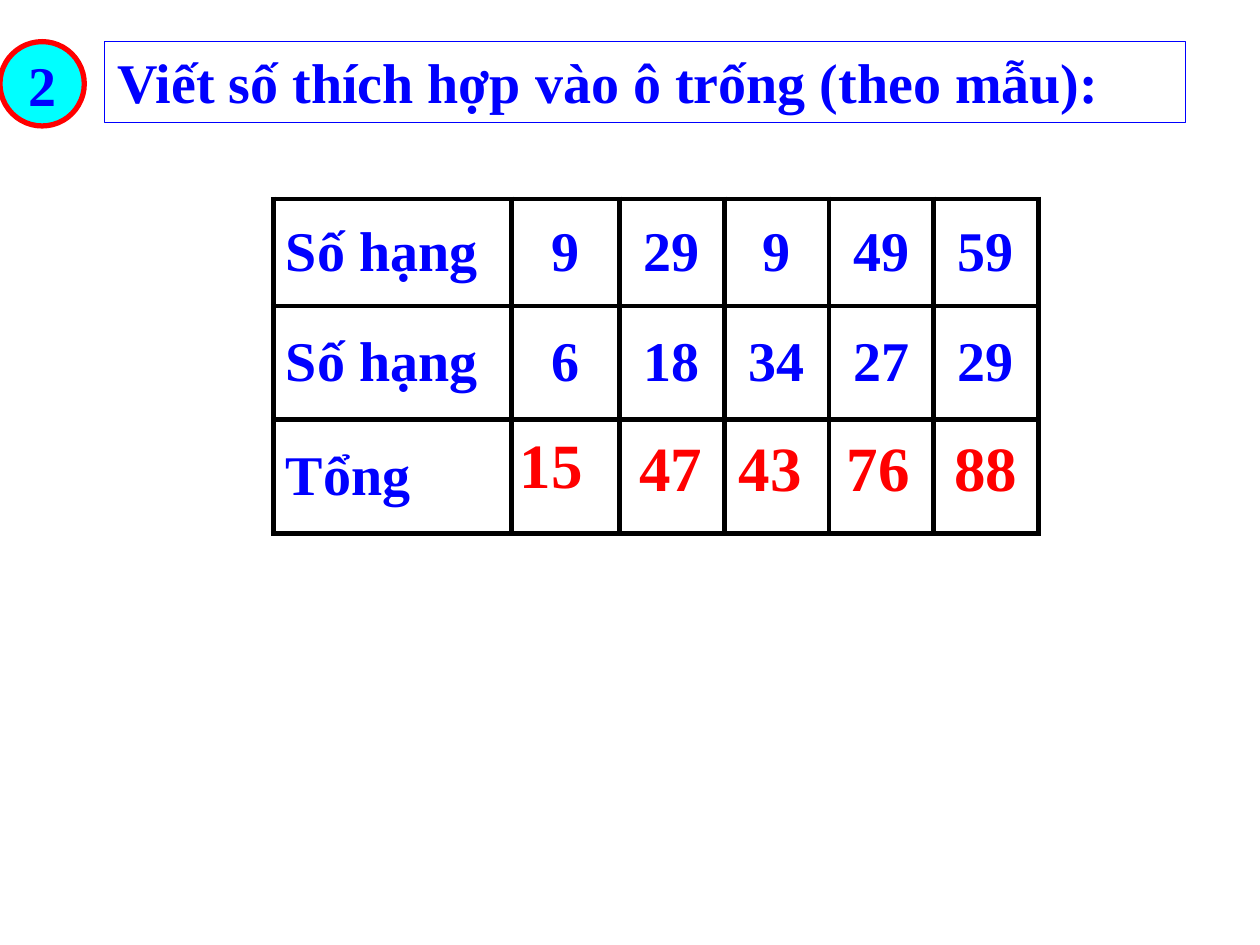
"""Build a maths exercise slide: an addition table with its sums filled in."""

from typing import NamedTuple

from lxml.etree import SubElement
from pptx import Presentation
from pptx.dml.color import RGBColor
from pptx.enum.shapes import MSO_SHAPE as Preset
from pptx.enum.text import MSO_ANCHOR as Anchor, MSO_AUTO_SIZE as AutoSize, PP_ALIGN as Align
from pptx.oxml.ns import qn
from pptx.util import Cm, Pt

BLUE, RED, CYAN, BLACK = "0000FF", "FF0000", "00FFFF", "000000"
ROWS = [
    ("Số hạng", "9", "29", "9", "49", "59"),
    ("Số hạng", "6", "18", "34", "27", "29"),
    ("Tổng", "", "", "", "", ""),
]
COLUMN_WIDTHS = [4.8, 2.18] + [2.11] * 4
ROW_HEIGHTS = [2.16, 2.29, 2.29]


class Answer(NamedTuple):
    total: str
    left: float
    top: float = 8.51


ANSWERS = [
    Answer("15", 10.16, 8.46),
    Answer("47", 12.57),
    Answer("43", 14.58),
    Answer("76", 16.76),
    Answer("88", 18.92),
]


def color(value: str) -> RGBColor:
    return RGBColor.from_string(value)


def write(frame, text: str, align=Align.CENTER, size: int = 32, ink: str = BLUE) -> None:
    paragraph = frame.paragraphs[0]
    paragraph.text = text
    paragraph.alignment = align
    font = paragraph.font
    font.name, font.size, font.bold = "Times New Roman", Pt(size), True
    font.color.rgb = color(ink)


def outline(shape, ink: str, width: float) -> None:
    shape.line.color.rgb = color(ink)
    shape.line.width = Pt(width)


def border(cell, ink: str, width: float) -> None:
    properties = cell._tc.get_or_add_tcPr()
    for side in ("lnL", "lnR", "lnT", "lnB"):
        edge = SubElement(properties, qn(f"a:{side}"), w=str(Pt(width)))
        SubElement(SubElement(edge, qn("a:solidFill")), qn("a:srgbClr"), val=ink)


def add_heading(slide, text: str) -> None:
    title = slide.shapes.title
    title.left, title.top, title.width, title.height = Cm(2.11), Cm(0.84), Cm(21.79), Cm(1.63)
    outline(title, BLUE, 0.75)
    frame = title.text_frame
    frame.auto_size = AutoSize.NONE
    frame.vertical_anchor = Anchor.TOP
    write(frame, text, Align.LEFT)


def add_exercise_number(slide, number: str) -> None:
    badge = slide.shapes.add_shape(Preset.OVAL, Cm(0), Cm(0.84), Cm(1.7), Cm(1.7))
    badge.shadow.inherit = False
    badge.fill.solid()
    badge.fill.fore_color.rgb = color(CYAN)
    outline(badge, RED, 3)
    badge.text_frame.word_wrap = False
    badge.text_frame.vertical_anchor = Anchor.MIDDLE
    write(badge.text_frame, number)


def add_addition_table(slide) -> None:
    table = slide.shapes.add_table(
        len(ROWS), len(COLUMN_WIDTHS), Cm(5.51), Cm(4.01),
        Cm(sum(COLUMN_WIDTHS)), Cm(sum(ROW_HEIGHTS)),
    ).table
    table.first_row = table.horz_banding = False
    for column, width in zip(table.columns, COLUMN_WIDTHS):
        column.width = Cm(width)
    for row, height, entries in zip(table.rows, ROW_HEIGHTS, ROWS):
        row.height = Cm(height)
        for index, (cell, entry) in enumerate(zip(row.cells, entries)):
            border(cell, BLACK, 3)
            cell.fill.background()
            cell.vertical_anchor = Anchor.MIDDLE
            if entry:
                write(cell.text_frame, entry, Align.CENTER if index else Align.LEFT)


def add_answer(slide, answer: Answer) -> None:
    box = slide.shapes.add_textbox(Cm(answer.left), Cm(answer.top), Cm(1.9), Cm(1.78))
    box.text_frame.word_wrap = True
    box.text_frame.auto_size = AutoSize.SHAPE_TO_FIT_TEXT
    write(box.text_frame, answer.total, size=36, ink=RED)


def main() -> None:
    deck = Presentation()
    deck.slide_width, deck.slide_height = Cm(25.4), Cm(19.05)
    slide = deck.slides.add_slide(deck.slide_layouts[5])
    add_heading(slide, "Viết số thích hợp vào ô trống (theo mẫu):")
    add_exercise_number(slide, "2")
    add_addition_table(slide)
    for answer in ANSWERS:
        add_answer(slide, answer)
    deck.save("out.pptx")


if __name__ == "__main__":
    main()
